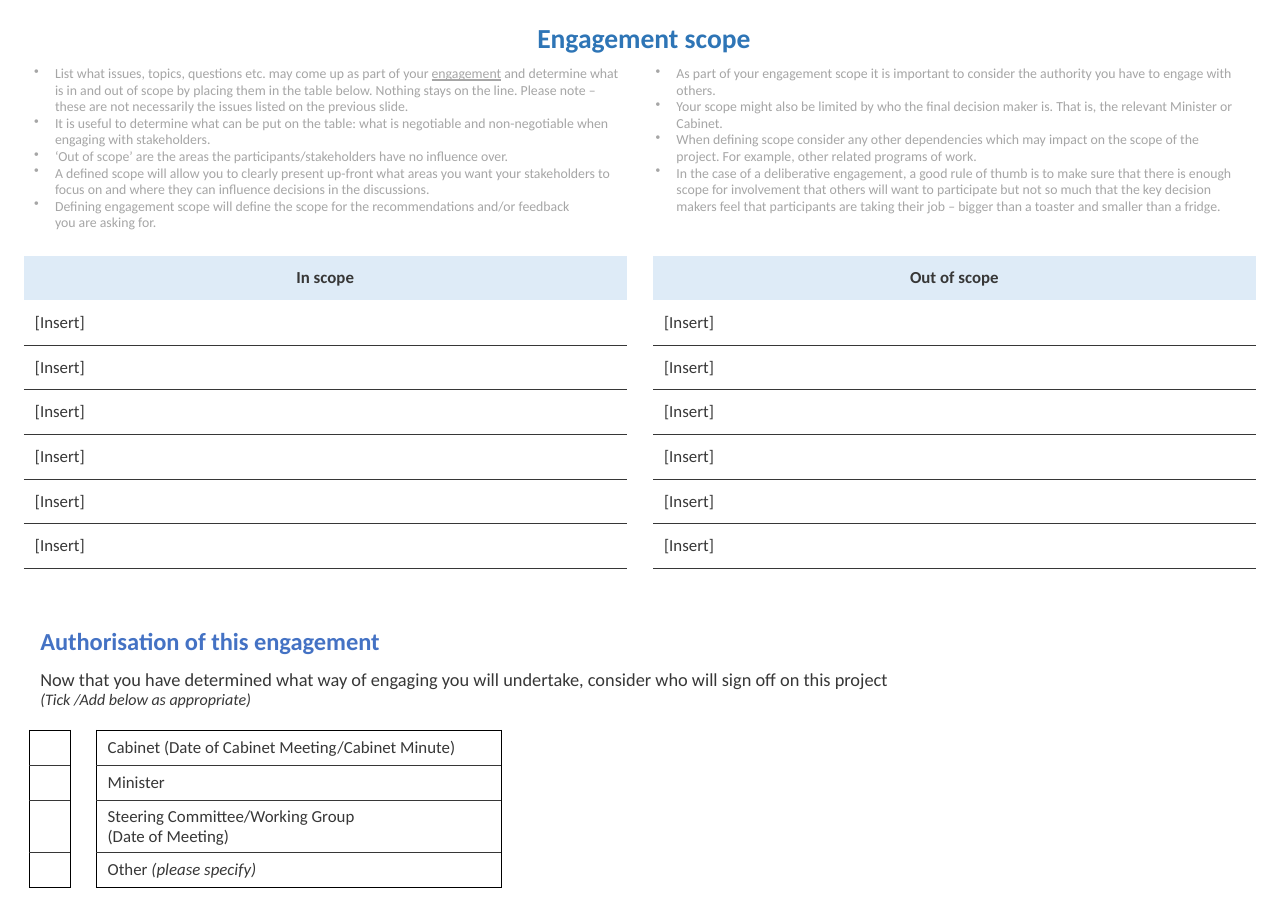
from dataclasses import dataclass

from lxml import etree
from pptx import Presentation
from pptx.dml.color import RGBColor
from pptx.enum.text import MSO_ANCHOR, PP_ALIGN
from pptx.oxml.ns import qn
from pptx.util import Cm, Pt

LEFT, CENTER = PP_ALIGN.LEFT, PP_ALIGN.CENTER
MIDDLE = MSO_ANCHOR.MIDDLE
NO_GRID_STYLE = "{2D5ABB26-0587-4C30-8999-92F81FD0307C}"


@dataclass(frozen=True)
class Theme:
    font: str = "Calibri"
    title: str = "2E75B6"
    heading: str = "4472C4"
    ink: str = "373737"
    hint: str = "A6A6A6"
    header_fill: str = "DEEBF7"
    frame: str = "000000"
    title_size: float = 18
    heading_size: float = 16
    lead_size: float = 12
    table_size: float = 11
    note_size: float = 10.5
    hint_size: float = 9


THEME = Theme()
RULE = (THEME.ink, 0.5)
FRAME = (THEME.frame, 0.25)

# A paragraph is a list of spans: (text, font attributes).
SCOPE_HINTS = [
    [("List what issues, topics, questions etc. may come up as part of your ", {}),
     ("engagement", {"underline": True}),
     (" and determine what is in and out of scope by placing them in the table below. "
      "Nothing stays on the line. Please note – these are not necessarily the issues "
      "listed on the previous slide.", {})],
    [("It is useful to determine what can be put on the table: what is negotiable and "
      "non-negotiable when engaging with stakeholders.", {})],
    [("‘Out of scope’ are the areas the participants/stakeholders have no influence over.", {})],
    [("A defined scope will allow you to clearly present up-front what areas you want your "
      "stakeholders to focus on and where they can influence decisions in the discussions.", {})],
    [("Defining engagement scope will define the scope for the recommendations and/or "
      "feedback\nyou are asking for.", {})],
]
AUTHORITY_HINTS = [
    [("As part of your engagement scope it is important to consider the authority you have "
      "to engage with others.", {})],
    [("Your scope might also be limited by who the final decision maker is. That is, the "
      "relevant Minister or Cabinet.", {})],
    [("When defining scope consider any other dependencies which may impact on the scope of "
      "the project. For example, other related programs of work.", {})],
    [("In the case of a deliberative engagement, a good rule of thumb is to make sure that "
      "there is enough scope for involvement that others will want to participate but not so "
      "much that the key decision makers feel that participants are taking their job – bigger "
      "than a toaster and smaller than a fridge.", {})],
]
LEAD = [
    [("Now that you have determined what way of engaging you will undertake, consider who "
      "will sign off on this project\n", {}),
     ("(Tick /Add below as appropriate)", {"size": Pt(THEME.note_size), "italic": True})],
]
APPROVERS = [
    [[("Cabinet (Date of Cabinet Meeting/Cabinet Minute)", {})]],
    [[("Minister", {})]],
    [[("Steering Committee/Working Group", {})], [("(Date of Meeting)", {})]],
    [[("Other ", {}), ("(please specify)", {"italic": True})]],
]


def write_paragraphs(frame, paragraphs, size, color, bold=False, align=LEFT):
    for index, spans in enumerate(paragraphs):
        para = frame.paragraphs[0] if index == 0 else frame.add_paragraph()
        para.alignment = align
        para.font.name, para.font.size, para.font.bold = THEME.font, Pt(size), bold
        para.font.color.rgb = RGBColor.from_string(color)
        for text, style in spans:
            for number, line in enumerate(text.split("\n")):
                if number:
                    para.add_line_break()
                if line:
                    span = para.add_run()
                    span.text = line
                    for name, value in style.items():
                        setattr(span.font, name, value)


def add_text(page, left, top, width, height, paragraphs, size, color, **options):
    box = page.shapes.add_textbox(Cm(left), Cm(top), Cm(width), Cm(height))
    box.text_frame.word_wrap = True
    write_paragraphs(box.text_frame, paragraphs, size, color, **options)
    return box


def add_heading(page, left, top, width, height, text, size, color, align=LEFT):
    box = add_text(page, left, top, width, height, [[(text, {})]], size, color,
                   bold=True, align=align)
    box.text_frame.paragraphs[0].line_spacing = 1.07


def add_bullets(page, left, top, width, height, paragraphs):
    box = add_text(page, left, top, width, height, paragraphs, THEME.hint_size, THEME.hint)
    for para in box.text_frame.paragraphs:
        properties = para._p.get_or_add_pPr()
        properties.set("marL", str(Cm(0.48)))
        properties.set("indent", str(-Cm(0.48)))
        bullet = etree.Element(qn("a:buChar"), char="•")
        properties.find(qn("a:defRPr")).addprevious(bullet)


def add_plain_table(page, left, top, widths, heights):
    """Add a table without style, banding or grid."""
    table = page.shapes.add_table(len(heights), len(widths), Cm(left), Cm(top),
                                  Cm(sum(widths)), Cm(sum(heights))).table
    table.first_row = table.horz_banding = False
    table._tbl.tblPr.find(qn("a:tableStyleId")).text = NO_GRID_STYLE
    for column, width in zip(table.columns, widths):
        column.width = Cm(width)
    for row, height in zip(table.rows, heights):
        row.height = Cm(height)
    for cell in table.iter_cells():
        cell.fill.background()
        cell.vertical_anchor = MIDDLE
    return table


def set_borders(cell, **sides):
    """Draw the given sides (L, R, T, B), each a (colour, points) pair."""
    properties = cell._tc.get_or_add_tcPr()
    drawn = [side for side in "LRTB" if side in sides]
    for position, side in enumerate(drawn):
        color, points = sides[side]
        line = etree.Element(qn(f"a:ln{side}"), w=str(Pt(points)))
        fill = etree.SubElement(line, qn("a:solidFill"))
        etree.SubElement(fill, qn("a:srgbClr"), val=color)
        properties.insert(position, line)


def add_scope_table(page):
    table = add_plain_table(page, 0.55, 5.89, [13.9, 0.58, 13.9], [1.03] * 7)
    for column, title in ((0, "In scope"), (2, "Out of scope")):
        header = table.cell(0, column)
        header.fill.solid()
        header.fill.fore_color.rgb = RGBColor.from_string(THEME.header_fill)
        write_paragraphs(header.text_frame, [[(title, {})]], THEME.table_size, THEME.ink,
                         bold=True, align=CENTER)
        for row in range(1, 7):
            cell = table.cell(row, column)
            write_paragraphs(cell.text_frame, [[("[Insert]", {})]],
                             THEME.table_size, THEME.ink)
            set_borders(cell, B=RULE)


def add_approval_table(page):
    table = add_plain_table(page, 0.68, 16.83, [0.94, 0.6, 9.33], [0.81, 0.81, 1.2, 0.81])
    last = len(APPROVERS) - 1
    for row, approver in enumerate(APPROVERS):
        for column, paragraphs in enumerate(([[]], [[]], approver)):
            cell = table.cell(row, column)
            write_paragraphs(cell.text_frame, paragraphs, THEME.table_size, THEME.ink)
            if column != 1:
                set_borders(cell, L=FRAME, R=FRAME, T=RULE if row else FRAME,
                            B=RULE if row < last else FRAME)


def main():
    deck = Presentation()
    deck.slide_width, deck.slide_height = Cm(29.7), Cm(21)
    page = deck.slides.add_slide(deck.slide_layouts[6])

    add_heading(page, 0, 0.3, 29.7, 1.1, "Engagement scope",
                THEME.title_size, THEME.title, align=CENTER)
    for column, hints in enumerate((SCOPE_HINTS, AUTHORITY_HINTS)):
        add_bullets(page, 0.54 + column * 14.33, 1.37, 14.04, 4, hints)
    add_scope_table(page)

    add_heading(page, 0.68, 14.27, 16.03, 1, "Authorisation of this engagement",
                THEME.heading_size, THEME.heading)
    add_text(page, 0.68, 15.27, 21.44, 1.22, LEAD, THEME.lead_size, THEME.ink)
    add_approval_table(page)
    deck.save("out.pptx")


if __name__ == "__main__":
    main()
